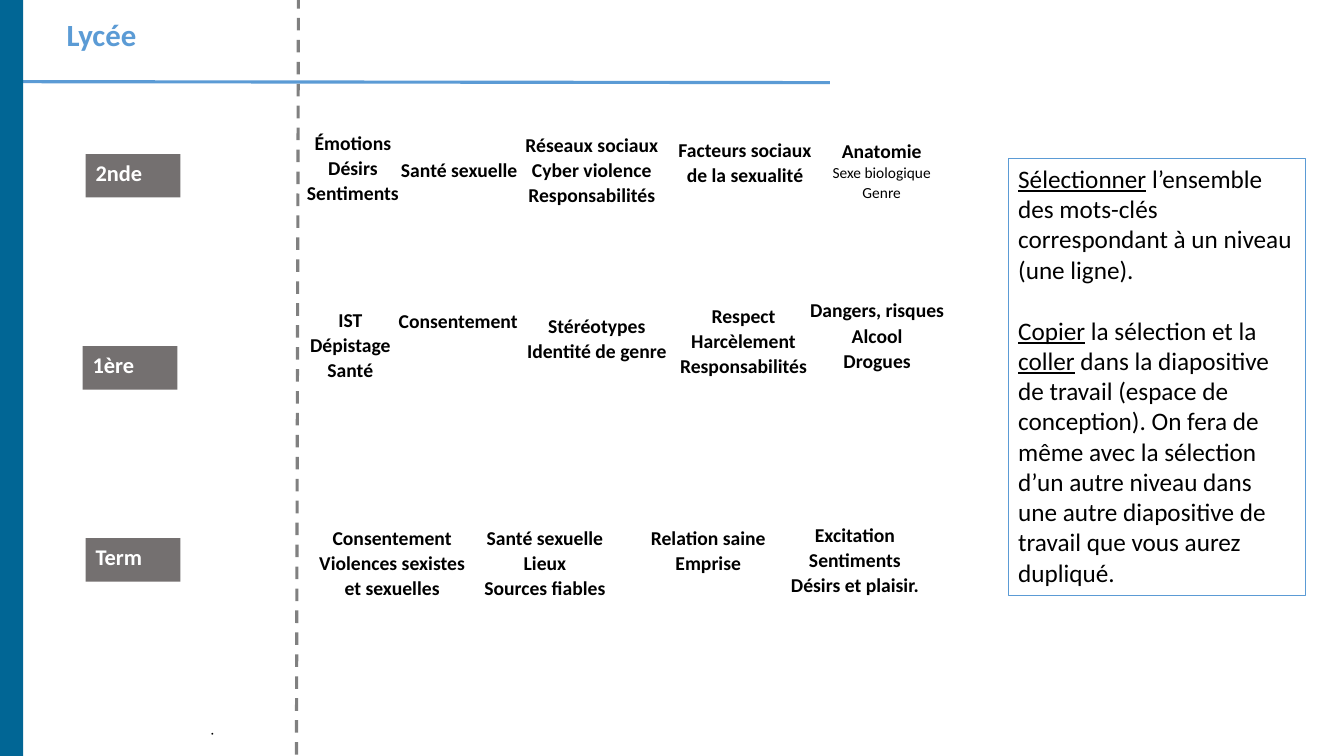
from dataclasses import dataclass
from lxml import etree
from pptx import Presentation, util as u
from pptx.dml.color import RGBColor
from pptx.enum import dml, shapes, text
from pptx.oxml import ns

TITLE = "Lycée"
LEVELS = [
    ("2nde", 0.85, [
        (2.94, -0.3, 1.12, ["Émotions", "Désirs", "Sentiments"], []),
        (3.87, -0.03, 1.37, ["Santé sexuelle"], []),
        (5.11, -0.28, 1.52, ["Réseaux sociaux", "Cyber violence", "Responsabilités"], []),
        (6.62, -0.23, 1.54, ["Facteurs sociaux", "de la sexualité"], []),
        (8.15, -0.22, 1.19, ["Anatomie"], ["Sexe biologique", "Genre"]),
    ]),
    ("1ère", 0.82, [
        (2.97, -0.45, 1.01, ["IST", "Dépistage", "Santé"], []),
        (3.85, -0.44, 1.39, ["Consentement"], []),
        (5.12, -0.39, 1.6, ["Stéréotypes", "Identité de genre"], []),
        (6.64, -0.49, 1.47, ["Respect", "Harcèlement", "Responsabilités"], []),
        (7.93, -0.54, 1.54, ["Dangers, risques", "Alcool", "Drogues"], []),
    ]),
    ("Term", 0.85, [
        (3.06, -0.19, 1.66, ["Consentement", "Violences sexistes", "et sexuelles"], []),
        (4.7, -0.19, 1.41, ["Santé sexuelle", "Lieux", "Sources fiables"], []),
        (6.35, -0.19, 1.35, ["Relation saine", "Emprise"], []),
        (7.73, -0.22, 1.5, ["Excitation", "Sentiments", "Désirs et plaisir."], []),
    ]),
]
INSTRUCTIONS = [
    [("Sélectionner", True),
     (" l’ensemble des mots-clés correspondant à un niveau (une ligne).", False)],
    [("Copier", True), (" la sélection et la ", False), ("coller", True),
     (" dans la diapositive de travail (espace de conception). On fera de même avec "
      "la sélection d’un autre niveau dans une autre diapositive de travail que vous "
      "aurez dupliqué.", False)],
]


@dataclass(frozen=True)
class Theme:
    font: str = "Calibri"
    accent: str = "5B9BD5"
    band: str = "016695"
    tag: str = "747070"
    dash: str = "808080"
    ink: str = "000000"
    paper: str = "FFFFFF"
    title: int = 22
    body: int = 18
    label: int = 16
    keyword: int = 14
    detail: int = 11


T = Theme()
WIDTH, HEIGHT = 13.33, 7.5
ROW_TOP, ROW_PITCH = 1.53, 1.905
TAG_W, TAG_H = 0.94, 0.43
KEYWORD_H = 0.92
LINE_SPACING = 1.07


def rgb(value):
    return RGBColor.from_string(value)


def inches(*lengths):
    return [u.Inches(length) for length in lengths]


def style(p, size, color=T.ink, bold=False):
    p.font.name, p.font.size, p.font.bold = T.font, u.Pt(size), bold
    p.font.color.rgb = rgb(color)


def paragraph(tf, index):
    return tf.add_paragraph() if index else tf.paragraphs[0]


def add_rect(s, box, fill, line=None):
    sp = s.shapes.add_shape(shapes.MSO_SHAPE.RECTANGLE, *inches(*box))
    sp.shadow.inherit = False
    sp.fill.solid()
    sp.fill.fore_color.rgb = rgb(fill)
    if line:
        sp.line.color.rgb, sp.line.width = rgb(line), u.Pt(1)
    else:
        sp.line.fill.background()
    sp.text_frame.vertical_anchor = text.MSO_ANCHOR.TOP
    return sp


def add_line(s, ends, color, dash=None):
    sp = s.shapes.add_connector(shapes.MSO_CONNECTOR.STRAIGHT, *inches(*ends))
    sp.line.color.rgb, sp.line.width = rgb(color), u.Pt(2.25)
    if dash:
        sp.line.dash_style = dash
    etree.SubElement(sp._element.spPr, ns.qn("a:effectLst"))


def add_words(s, box, lines, wrap=False, after=0):
    sp = s.shapes.add_textbox(*inches(*box))
    tf = sp.text_frame
    tf.word_wrap = wrap
    for i, (words, size, bold) in enumerate(lines):
        p = paragraph(tf, i)
        p.text, p.alignment = words, text.PP_ALIGN.CENTER
        p.line_spacing, p.space_after = LINE_SPACING, u.Pt(after)
        style(p, size, bold=bold)
    return sp


def add_title(s):
    sp = s.shapes.title
    sp.left, sp.top, sp.width, sp.height = inches(0.56, -0.23, 0.9, 1.14)
    tf = sp.text_frame
    tf.word_wrap, tf.auto_size = False, text.MSO_AUTO_SIZE.NONE
    tf.vertical_anchor = text.MSO_ANCHOR.MIDDLE
    p = tf.paragraphs[0]
    p.text, p.alignment = TITLE, text.PP_ALIGN.LEFT
    style(p, T.title, T.accent, True)


def add_level(s, top, name, left, keywords):
    p = add_rect(s, (left, top, TAG_W, TAG_H), T.tag).text_frame.paragraphs[0]
    p.text, p.alignment = name, text.PP_ALIGN.LEFT
    style(p, T.label, T.paper, True)
    for x, drop, width, words, details in keywords:
        lines = [(w, T.keyword, True) for w in words]
        lines += [(d, T.detail, False) for d in details]
        add_words(s, (x, top + drop, width, KEYWORD_H), lines)


def add_instructions(s):
    tf = add_rect(s, (10, 1.57, 2.95, 4.34), T.paper, T.accent).text_frame
    tf.word_wrap = True
    for i, parts in enumerate(INSTRUCTIONS):
        p = paragraph(tf, i)
        p.alignment, p.space_before = text.PP_ALIGN.LEFT, u.Pt(22 * i)
        style(p, T.body)
        for words, underlined in parts:
            r = p.add_run()
            r.text, r.font.underline = words, underlined


def main():
    prs = Presentation()
    prs.slide_width, prs.slide_height = inches(WIDTH, HEIGHT)
    s = prs.slides.add_slide(prs.slide_layouts[5])
    add_line(s, (0, 0.81, 8.23, 0.82), T.accent)
    add_title(s)
    for i, level in enumerate(LEVELS):
        add_level(s, ROW_TOP + i * ROW_PITCH, *level)
    dot = add_words(s, (1.44, 7.18, 1.21, 0.27), [(".", T.detail, False)], True, 8)
    dot.rotation = 239.9
    add_line(s, (2.96, -0.04, 2.94, 7.61), T.dash, dml.MSO_LINE.DASH)
    add_instructions(s)
    add_rect(s, (0, 0, 0.23, HEIGHT), T.band)
    prs.save("out.pptx")


if __name__ == "__main__":
    main()
